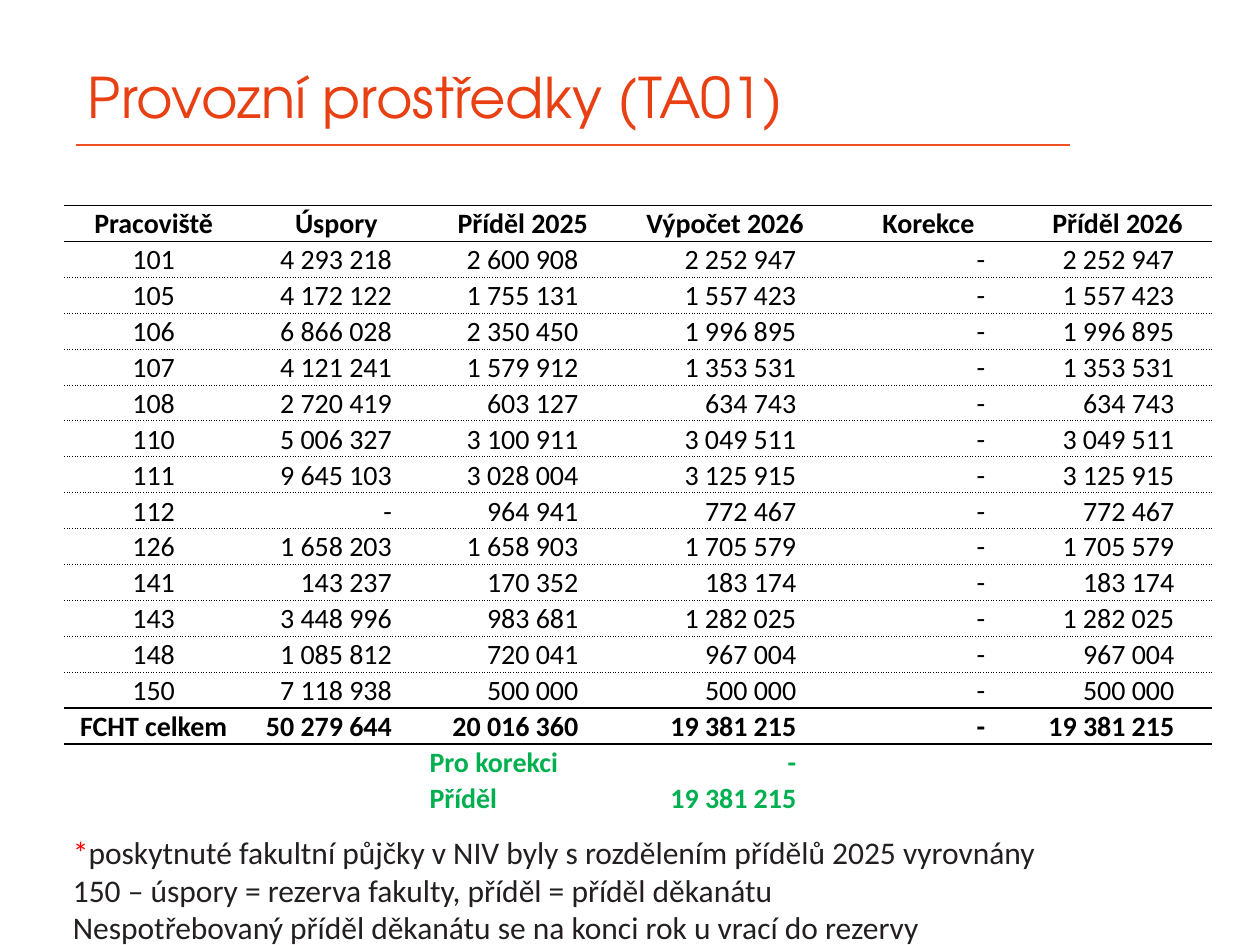
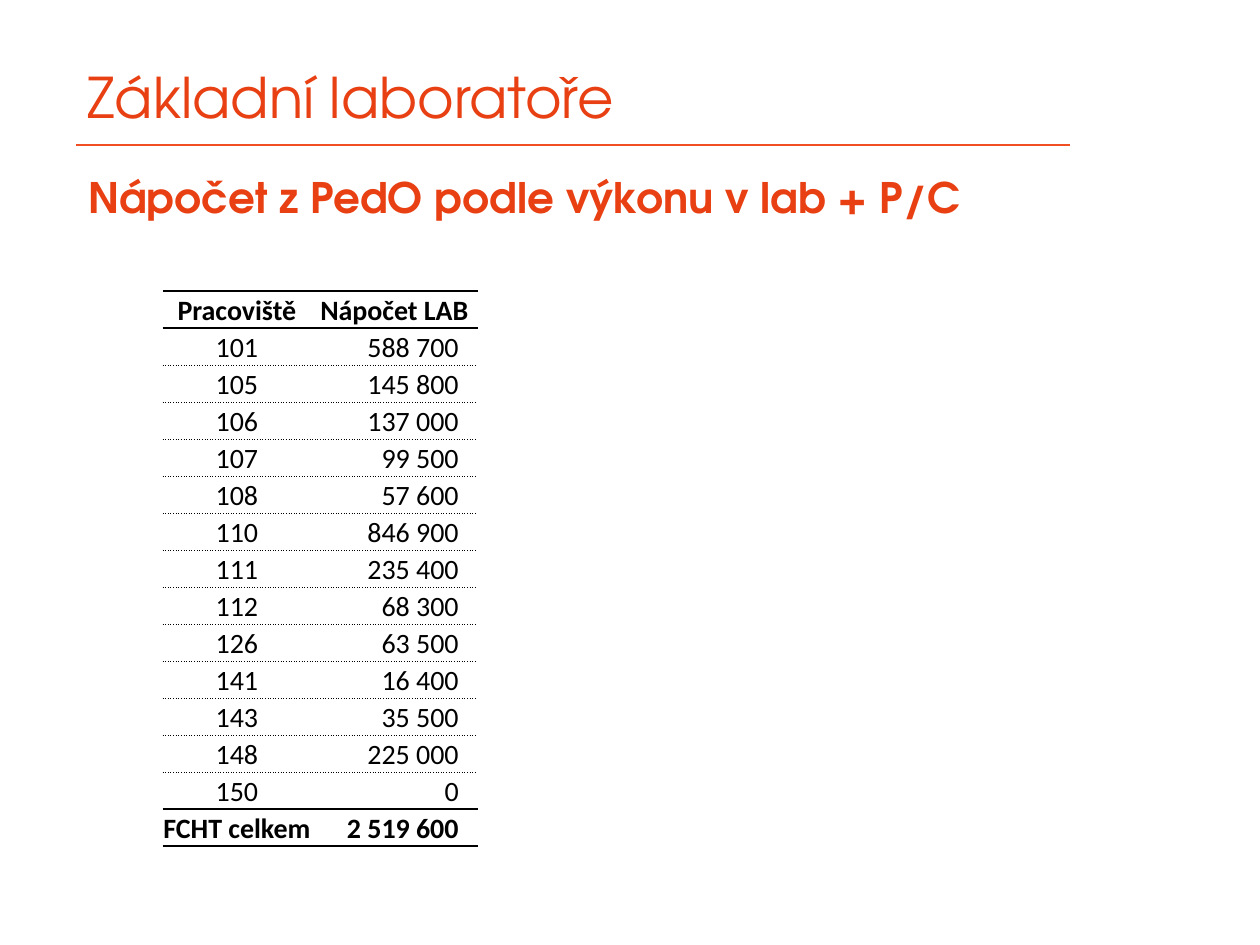
import pptx
import pptx.dml.color
import pptx.enum.shapes
import pptx.enum.text
import pptx.oxml.ns
import pptx.util
import lxml.etree

Inches = pptx.util.Inches
Pt = pptx.util.Pt
ALIGN = pptx.enum.text.PP_ALIGN
ANCHOR = pptx.enum.text.MSO_ANCHOR
HEAD, BODY = "TeX Gyre Adventor", "Calibri"
ORANGE, RULE, INK = "E84013", "F04E23", "231F20"
BLACK, RED, GREEN = "000000", "FF0000", "00B050"
UNITS = ["101", "105", "106", "107", "108", "110", "111", "112", "126",
         "141", "143", "148", "150", "FCHT celkem"]
TOTAL = len(UNITS)

FUNDS_HEAD = ["Pracoviště", "Úspory", "Příděl 2025", "Výpočet 2026",
              "Korekce", "Příděl 2026"]
SAVED = ["4 293 218", "4 172 122", "6 866 028", "4 121 241", "2 720 419",
         "5 006 327", "9 645 103", "-", "1 658 203", "143 237", "3 448 996",
         "1 085 812", "7 118 938", "50 279 644"]
LAST = ["2 600 908", "1 755 131", "2 350 450", "1 579 912", "603 127",
        "3 100 911", "3 028 004", "964 941", "1 658 903", "170 352",
        "983 681", "720 041", "500 000", "20 016 360"]
NEXT = ["2 252 947", "1 557 423", "1 996 895", "1 353 531", "634 743",
        "3 049 511", "3 125 915", "772 467", "1 705 579", "183 174",
        "1 282 025", "967 004", "500 000", "19 381 215"]
LABS = ["588 700", "145 800", "137 000", "99 500", "57 600", "846 900",
        "235 400", "68 300", "63 500", "16 400", "35 500", "225 000", "0",
        "2 519 600"]
NOTES = [
    [("*", RED), ("poskytnuté fakultní půjčky v NIV byly s rozdělením "
                  "přídělů 2025 vyrovnány", INK)],
    [("150 – úspory = rezerva fakulty, příděl = příděl děkanátu", INK)],
    [("Nespotřebovaný příděl děkanátu se na konci rok u vrací do rezervy",
      INK)],
]


def color(code):
    """Turn a hex string into a colour."""
    return pptx.dml.color.RGBColor.from_string(code)


def style(font, face, size, code, bold=False):
    """Set the look of a font."""
    font.name, font.size, font.bold = face, Pt(size), bold
    font.color.rgb = color(code)


def add_text(slide, box, lines, face, size, bold=False, anchor=ANCHOR.TOP):
    """Add a text box whose lines are lists of (text, colour) runs."""
    frame = slide.shapes.add_textbox(*map(Inches, box)).text_frame
    frame.word_wrap = True
    frame.vertical_anchor = anchor
    for num, line in enumerate(lines):
        para = frame.add_paragraph() if num else frame.paragraphs[0]
        for text, code in line:
            run = para.add_run()
            run.text = text
            style(run.font, face, size, code, bold)
    return frame


def add_slide(deck, title):
    """Add a blank slide with the shared title and rule."""
    slide = deck.slides.add_slide(deck.slide_layouts[6])
    line = slide.shapes.add_connector(
        pptx.enum.shapes.MSO_CONNECTOR.STRAIGHT,
        Inches(0.6), Inches(1.15), Inches(8.49), Inches(1.15))
    line.line.color.rgb = color(RULE)
    line.line.width = Pt(1)
    lxml.etree.SubElement(line._element.spPr,
                          pptx.oxml.ns.qn("a:effectLst"))
    frame = add_text(slide, (0.6, 0.52, 8, 0.55), [[(title, ORANGE)]],
                     HEAD, 32, anchor=ANCHOR.MIDDLE)
    frame.paragraphs[0].line_spacing = 0.9
    return slide


def edge(num):
    """Give width and dash of the line above a table row."""
    if num in (0, 1, TOTAL, TOTAL + 1):
        return 1, "solid"
    return (0.5, "sysDot") if num < TOTAL else None


def set_edge(cell, index, side, look):
    """Draw one border of a cell, or hide it."""
    qn = pptx.oxml.ns.qn
    line = lxml.etree.Element(qn("a:" + side))
    if look:
        width, dash = look
        line.set("w", str(Pt(width)))
        fill = lxml.etree.SubElement(line, qn("a:solidFill"))
        lxml.etree.SubElement(fill, qn("a:srgbClr"), val=BLACK)
        lxml.etree.SubElement(line, qn("a:prstDash"), val=dash)
    else:
        lxml.etree.SubElement(line, qn("a:noFill"))
    cell._tc.get_or_add_tcPr().insert(index, line)


def fill_cell(cell, row, col, text, pad):
    """Write and style one table cell."""
    cell.fill.background()
    cell.margin_left = cell.margin_right = 0
    cell.margin_top = cell.margin_bottom = 0
    cell.vertical_anchor = ANCHOR.BOTTOM
    looks = [None, None, edge(row), edge(row + 1)]
    for index, side in enumerate(("lnL", "lnR", "lnT", "lnB")):
        set_edge(cell, index, side, looks[index])
    para = cell.text_frame.paragraphs[0]
    extra = row > TOTAL
    style(para.font, BODY, 16, BLACK)
    if row == 0 or col == 0:
        para.alignment = ALIGN.CENTER
    elif extra and col == 2:
        para.alignment = ALIGN.LEFT
    else:
        para.alignment = ALIGN.RIGHT
        cell.margin_right = Inches(pad)
    if text:
        run = para.add_run()
        run.text = text
        style(run.font, BODY, 16, GREEN if extra else BLACK,
              row == 0 or row >= TOTAL)


def add_table(slide, box, widths, rows, pad):
    """Add a ruled table with equal rows."""
    table = slide.shapes.add_table(len(rows), len(widths),
                                   *map(Inches, box)).table
    table.first_row = table.horz_banding = False
    for col, width in zip(table.columns, widths):
        col.width = Inches(width)
    for row, texts in enumerate(rows):
        table.rows[row].height = Inches(box[3] / len(rows))
        for col, text in enumerate(texts):
            fill_cell(table.cell(row, col), row, col, text, pad)


def funds(deck):
    """Build the slide on operating funds."""
    slide = add_slide(deck, "Provozní prostředky (TA01)")
    add_text(slide, (0.48, 6.56, 9.41, 1.01), NOTES, BODY, 18)
    rows = [FUNDS_HEAD, *zip(UNITS, SAVED, LAST, NEXT, ["-"] * TOTAL, NEXT),
            ["", "", "Pro korekci", "-", "", ""],
            ["", "", "Příděl", NEXT[-1], "", ""]]
    add_table(slide, (0.51, 1.63, 9.1, 4.85),
              [1.42, 1.48, 1.48, 1.73, 1.5, 1.5], rows, 0.3)


def labs(deck):
    """Build the slide on basic laboratories."""
    slide = add_slide(deck, "Základní laboratoře")
    add_text(slide, (0.6, 1.31, 9.11, 0.6),
             [[("Nápočet z PedO podle výkonu v lab + P/C", ORANGE)]],
             HEAD, 24, True)
    add_table(slide, (1.29, 2.31, 2.5, 4.41), [1.18, 1.32],
              [["Pracoviště", "Nápočet LAB"], *zip(UNITS, LABS)], 0.15)


def main():
    """Build and save the deck."""
    deck = pptx.Presentation()
    deck.slide_width, deck.slide_height = Inches(10), Inches(7.5)
    funds(deck)
    labs(deck)
    deck.save("out.pptx")


if __name__ == "__main__":
    main()
